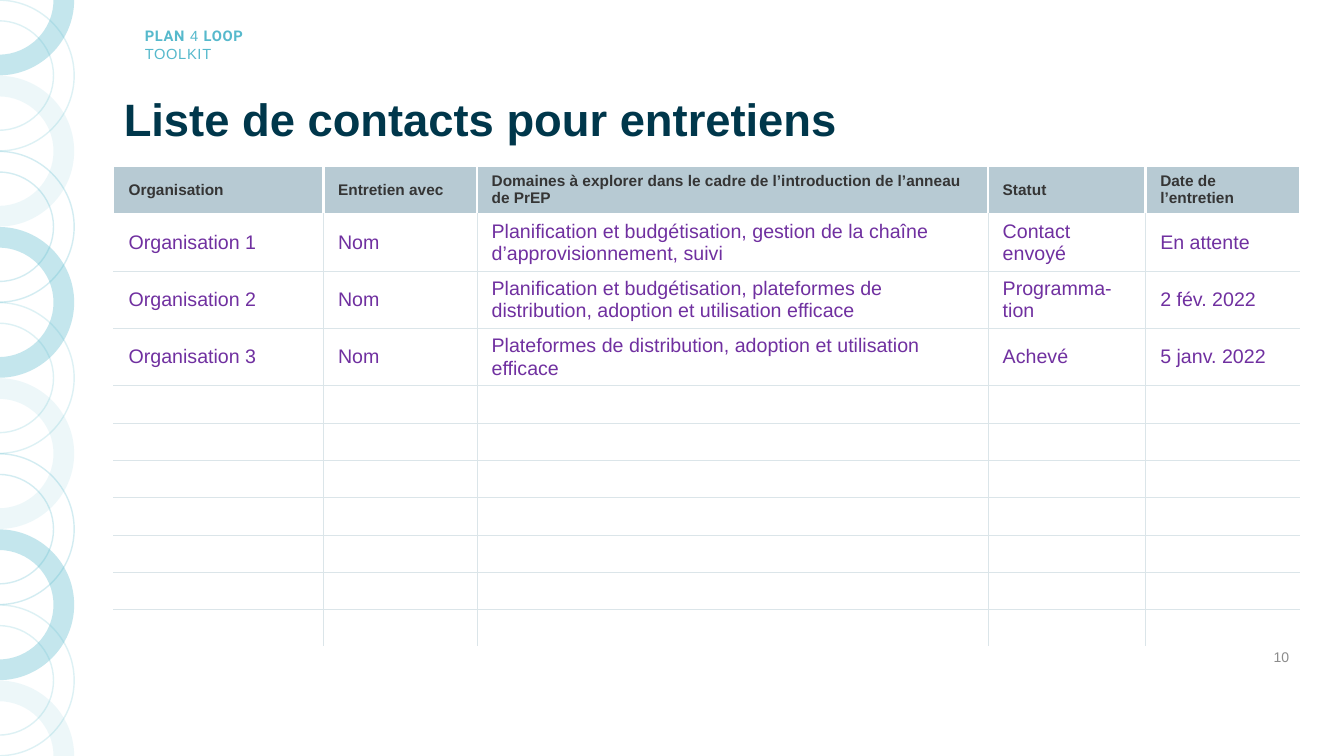
from math import cos, pi, sin

from lxml import etree
from pptx import Presentation
from pptx.dml.color import RGBColor
from pptx.enum.text import MSO_ANCHOR, PP_ALIGN
from pptx.oxml.ns import qn
from pptx.util import Cm, Pt

MIDDLE = MSO_ANCHOR.MIDDLE
LEFT, RIGHT = PP_ALIGN.LEFT, PP_ALIGN.RIGHT

TEAL, NAVY, GREY, PURPLE = "56B9CC", "00374B", "8C8C8C", "7030A0"
WHITE, HEAD_FILL, HEAD_TEXT, RULE = "FFFFFF", "B7CAD3", "353535", "DBE5E9"

TOOLKIT = [[("PLAN", "Roboto", True), (" 4 ", "Arial", False), ("LOOP", "Roboto", True)],
           [("TOOLKIT", "Arial", False)]]
TITLE = "Liste de contacts pour entretiens"
PAGE = "10"
CONTACTS = [
    ("Organisation", "Entretien avec",
     "Domaines à explorer dans le cadre de l’introduction de l’anneau de PrEP",
     "Statut", "Date de l’entretien"),
    ("Organisation 1", "Nom",
     "Planification et budgétisation, gestion de la chaîne d’approvisionnement, suivi",
     "Contact envoyé", "En attente"),
    ("Organisation 2", "Nom",
     "Planification et budgétisation, plateformes de distribution, adoption et utilisation efficace",
     "Programma-tion", "2 fév. 2022"),
    ("Organisation 3", "Nom",
     "Plateformes de distribution, adoption et utilisation efficace",
     "Achevé", "5 janv. 2022"),
]
EMPTY_ROWS = 7
COLUMN_WIDTHS = [5.28, 3.87, 12.88, 3.97, 3.88]
HEAD_HEIGHT, CONTACT_HEIGHT, EMPTY_HEIGHT = 1.13, 1.37, 0.94

RING_STYLES = [("fill", 35), ("line", 20), ("fill", 10), ("line", 25)]
RING_STEPS = 10
RING_LEFT, RING_OUTER, RING_INNER = -0.03, 1.9, 1.38
ARC_HANDLE = 0.55

HEAD_FORMAT = {"name": "Arial", "size": Pt(11), "bold": True}
CONTACT_FORMAT = {"name": "Arial", "size": Pt(14), "bold": False}
CELL_FORMAT = {"vertical_anchor": MIDDLE, "margin_left": Cm(0.37), "margin_right": Cm(0.37),
               "margin_top": Cm(0.13), "margin_bottom": Cm(0.13)}


def paint(color_format, hex_color):
    color_format.rgb = RGBColor.from_string(hex_color)


def apply(target, formats):
    for attribute, value in formats.items():
        setattr(target, attribute, value)


def add_run(paragraph, text, color, formats):
    run = paragraph.add_run()
    run.text = text
    apply(run.font, formats)
    paint(run.font.color, color)
    return run


def add_text(slide, left, top, width, height, anchor=None, align=LEFT, wrap=True):
    frame = slide.shapes.add_textbox(Cm(left), Cm(top), Cm(width), Cm(height)).text_frame
    apply(frame, {"word_wrap": wrap, "vertical_anchor": anchor})
    frame.paragraphs[0].alignment = align
    return frame.paragraphs[0]


def arc_points(center, radius, first_quarter, quarters):
    def spot(x, y):
        return Cm(RING_LEFT + radius * x), center + Cm(radius * y)

    points = []
    for quarter in range(first_quarter, first_quarter + quarters):
        x1, y1 = cos(quarter * pi / 2), sin(quarter * pi / 2)
        x2, y2 = -y1, x1
        points += [spot(x1, y1), spot(x1 + ARC_HANDLE * x2, y1 + ARC_HANDLE * y2),
                   spot(x2 + ARC_HANDLE * x1, y2 + ARC_HANDLE * y1)]
    return points + [spot(x2, y2)]


def bend(ring, quarters):
    segments = list(ring._element.iter(qn("a:lnTo")))
    arc_length = 3 * quarters
    for arc_start in (0, arc_length + 1):
        for i in range(arc_start, arc_start + arc_length, 3):
            curve = etree.Element(qn("a:cubicBezTo"))
            segments[i].addprevious(curve)
            for segment in segments[i:i + 3]:
                curve.append(segment[0])
                segment.getparent().remove(segment)


def add_ring(slide, center, first_quarter, quarters, part, opacity):
    outline = (arc_points(center, RING_OUTER, first_quarter, quarters)
               + arc_points(center, RING_INNER, first_quarter, quarters)[::-1])
    builder = slide.shapes.build_freeform(*outline[0])
    builder.add_line_segments(outline[1:], close=True)
    ring = builder.convert_to_shape()
    bend(ring, quarters)
    ring.shadow.inherit = False
    if part == "fill":
        ring.line.fill.background()
        ring.fill.solid()
        paint(ring.fill.fore_color, TEAL)
    else:
        ring.fill.background()
        ring.line.width = Pt(1)
        paint(ring.line.color, TEAL)
    for color in ring._element.iter(qn("a:srgbClr")):
        etree.SubElement(color, qn("a:alpha")).set("val", str(opacity * 1000))


def add_borders(cell, borders):
    properties = cell._tc.get_or_add_tcPr()
    for position, (side, (color, width)) in enumerate(borders.items()):
        border = etree.Element(qn("a:ln" + side), w=str(Pt(width)))
        properties.insert(position, border)
        solid = etree.SubElement(border, qn("a:solidFill"))
        etree.SubElement(solid, qn("a:srgbClr")).set("val", color)


def add_contacts(slide):
    heights = ([HEAD_HEIGHT] + [CONTACT_HEIGHT] * (len(CONTACTS) - 1)
               + [EMPTY_HEIGHT] * EMPTY_ROWS)
    last_row, last_column = len(heights) - 1, len(COLUMN_WIDTHS) - 1
    table = slide.shapes.add_table(len(heights), len(COLUMN_WIDTHS), Cm(2.87), Cm(4.19),
                                   Cm(sum(COLUMN_WIDTHS)), Cm(sum(heights))).table
    apply(table, {"first_row": False, "horz_banding": False})
    for column, width in zip(table.columns, COLUMN_WIDTHS):
        column.width = Cm(width)
    for r, height in enumerate(heights):
        table.rows[r].height = Cm(height)
        rule = (RULE, 0.75) if r else (WHITE, 2.25)
        for c in range(len(COLUMN_WIDTHS)):
            cell = table.cell(r, c)
            apply(cell, CELL_FORMAT)
            cell.fill.solid()
            paint(cell.fill.fore_color, WHITE if r else HEAD_FILL)
            inner = {"L": c > 0, "R": c < last_column, "T": r > 1, "B": 0 < r < last_row}
            add_borders(cell, {side: rule for side, drawn in inner.items() if drawn})
            paragraph = cell.text_frame.paragraphs[0]
            if r < len(CONTACTS):
                add_run(paragraph, CONTACTS[r][c], PURPLE if r else HEAD_TEXT,
                        CONTACT_FORMAT if r else HEAD_FORMAT)
            else:
                etree.SubElement(paragraph._p, qn("a:endParaRPr")).set("sz", "1400")


def main():
    deck = Presentation()
    deck.slide_width, deck.slide_height = Cm(33.87), Cm(19.05)
    slide = deck.slides.add_slide(deck.slide_layouts[6])

    for i in range(RING_STEPS + 1):
        first_quarter = 0 if i == 0 else -1
        quarters = 1 if i in (0, RING_STEPS) else 2
        add_ring(slide, deck.slide_height * i // RING_STEPS, first_quarter, quarters,
                 *RING_STYLES[i % len(RING_STYLES)])

    toolkit = add_text(slide, 3.4, 0.56, 4.67, 0.71, wrap=False)
    for i, line in enumerate(TOOLKIT):
        if i:
            toolkit.add_line_break()
        for text, font, bold in line:
            run = add_run(toolkit, text, TEAL, {"name": font, "size": Pt(10.5), "bold": bold})
            run.font._element.set("spc", "50")

    title = add_text(slide, 2.87, 2.36, 28.12, 1.42, MIDDLE)
    title.line_spacing = 0.9
    add_run(title, TITLE, NAVY, {"name": "Arial", "size": Pt(32.4), "bold": True})

    page = add_text(slide, 25.12, 16.05, 7.62, 1.02, MIDDLE, RIGHT)
    add_run(page, PAGE, GREY, {"name": "Arial", "size": Pt(10)})

    add_contacts(slide)
    deck.save("out.pptx")


if __name__ == "__main__":
    main()
